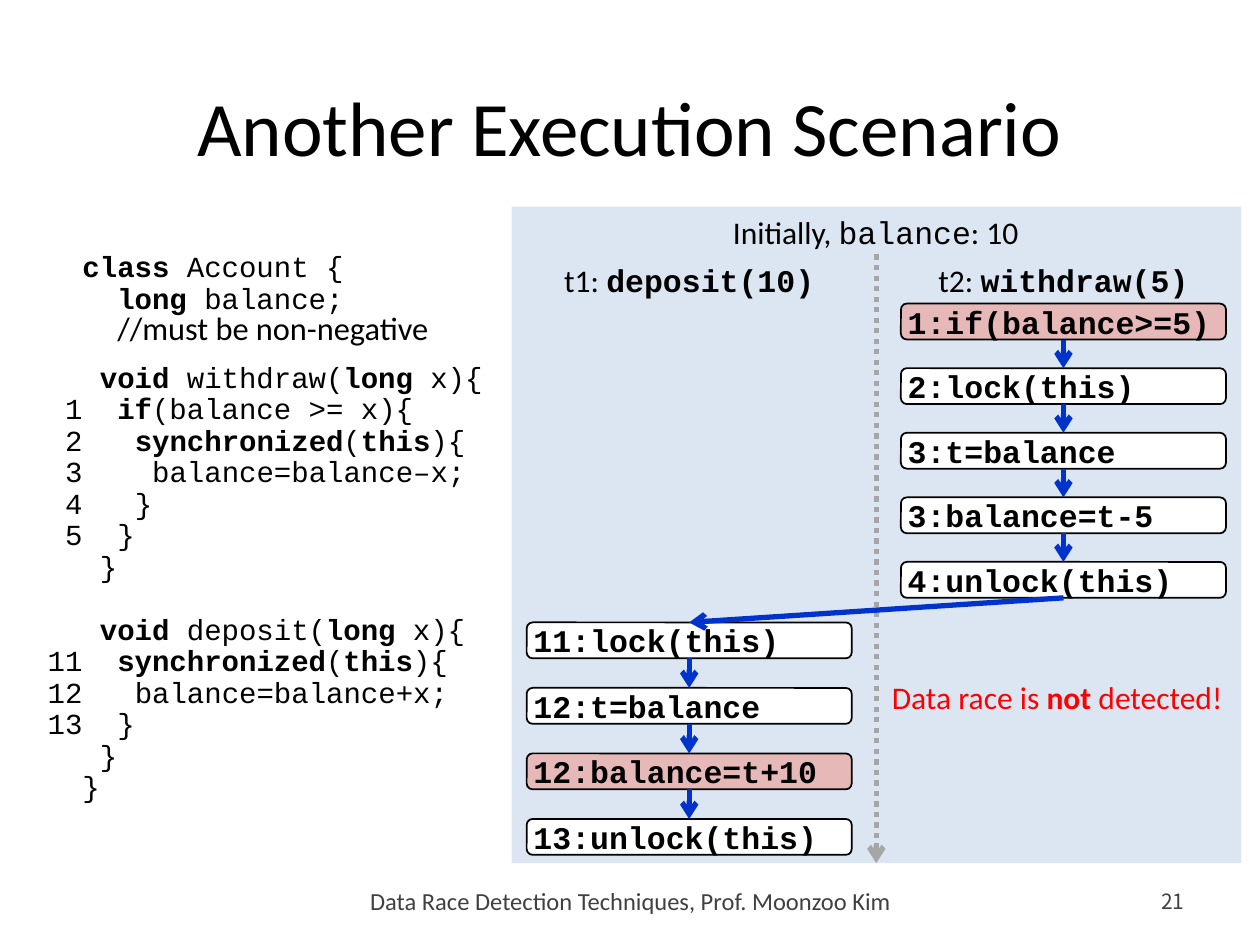
from collections import namedtuple

from lxml import etree
from pptx import Presentation
from pptx import util as u
from pptx.dml.color import RGBColor
from pptx.enum import dml, shapes, text
from pptx.oxml import ns

BLACK = RGBColor(0x00, 0x00, 0x00)
WHITE = RGBColor(0xFF, 0xFF, 0xFF)
RED = RGBColor(0xFF, 0x00, 0x00)
PINK = RGBColor(0xE6, 0xB9, 0xB8)
PALE_BLUE = RGBColor(0xDC, 0xE6, 0xF2)
BLUE = RGBColor(0x00, 0x33, 0xCC)
GREY = RGBColor(0xA6, 0xA6, 0xA6)
DARK_GREY = RGBColor(0x40, 0x40, 0x40)

SANS, MONO, NUMBER_FONT = "Calibri", "Courier New", "Noto Sans CJK KR"
WIDTH, HEIGHT = u.Inches(10), u.Inches(7.5)
COLUMN, ROW = WIDTH / 100, HEIGHT / 75
CODE_SIZE, CODE_PITCH = 16.6, 18
CHARACTER = CODE_SIZE * 0.6
NODE_WIDTH, NODE_HEIGHT = 25.8, 2.85
LABEL_HEIGHT = 4

Box = namedtuple("Box", "left top width height")
Line = namedtuple("Line", "number indent code gap comment", defaults=("", 0, ""))

CODE = [
    Line("", 2, "*class* Account {"),
    Line("", 4, "*long* balance;", comment="//must be non-negative"),
    Line("", 3, "*void* withdraw(*long* x){", gap=9),
    Line("1", 4, "*if*(balance >= x){"),
    Line("2", 5, "*synchronized*(*this*){"),
    Line("3", 6, "balance=balance–x;"),
    Line("4", 5, "}"),
    Line("5", 4, "}"),
    Line("", 3, "}"),
    Line("", 3, "*void* deposit(*long* x){", gap=CODE_PITCH),
    Line("11", 4, "*synchronized*(*this*){"),
    Line("12", 5, "balance=balance+x;"),
    Line("13", 4, "}"),
    Line("", 3, "}"),
    Line("", 2, "}"),
]
WITHDRAW = ["1:if(balance>=5)", "2:lock(this)", "3:t=balance", "3:balance=t-5", "4:unlock(this)"]
DEPOSIT = ["11:lock(this)", "12:t=balance", "12:balance=t+10", "13:unlock(this)"]
RACING = {"1:if(balance>=5)", "12:balance=t+10"}


def place(box):
    """Turn a box in grid units into slide lengths."""
    return [round(length * unit) for length, unit in zip(box, (COLUMN, ROW) * 2)]


def add_run(paragraph, words, size, font=SANS, bold=False, color=BLACK):
    """Add one styled run to a paragraph."""
    run = paragraph.add_run()
    run.text = words
    run.font.size = u.Pt(size)
    run.font.name = font
    run.font.bold = bold
    run.font.color.rgb = color


def add_label(slide, box, runs, size=18, color=BLACK, align=text.PP_ALIGN.CENTER,
              anchor=text.MSO_ANCHOR.TOP, wrap=True):
    """Add a one-paragraph text box from (words, font, bold) runs."""
    frame = slide.shapes.add_textbox(*place(box)).text_frame
    frame.word_wrap = wrap
    frame.vertical_anchor = anchor
    paragraph = frame.paragraphs[0]
    paragraph.alignment = align
    for words, font, bold in runs:
        add_run(paragraph, words, size, font, bold, color)


def add_panel(slide, kind, box, fill):
    """Add a flat filled shape without an outline."""
    shape = slide.shapes.add_shape(kind, *place(box))
    shape.shadow.inherit = False
    shape.fill.solid()
    shape.fill.fore_color.rgb = fill
    shape.line.fill.background()
    return shape


def add_arrow(slide, start, end, color=BLUE, dash=None):
    """Add a straight arrow between two grid points."""
    connector = slide.shapes.add_connector(
        shapes.MSO_CONNECTOR.STRAIGHT, *place((*start, *end)))
    connector.line.color.rgb = color
    connector.line.width = u.Pt(3)
    if dash:
        connector.line.dash_style = dash
    tail = etree.SubElement(connector.line._get_or_add_ln(), ns.qn("a:tailEnd"))
    tail.set("type", "arrow")
    etree.SubElement(connector._element.spPr, ns.qn("a:effectLst"))


def add_code(slide, box):
    """Write the numbered class listing inside the box."""
    frame = slide.shapes.add_textbox(*place(box)).text_frame
    frame.word_wrap = True
    frame.vertical_anchor = text.MSO_ANCHOR.MIDDLE
    for index, line in enumerate(CODE):
        paragraph = frame.add_paragraph() if index else frame.paragraphs[0]
        paragraph.line_spacing = u.Pt(CODE_PITCH)
        paragraph.space_before = u.Pt(line.gap)
        properties = paragraph._p.get_or_add_pPr()
        properties.set("marL", str(u.Pt(line.indent * CHARACTER)))
        hanging = 0
        if line.number:
            hanging = 2 - len(line.number) - line.indent
            add_run(paragraph, line.number + "\t", CODE_SIZE, MONO)
        properties.set("indent", str(u.Pt(hanging * CHARACTER)))
        for part, words in enumerate(line.code.split("*")):
            if words:
                add_run(paragraph, words, CODE_SIZE, MONO, part % 2 == 1)
        if line.comment:
            paragraph.add_line_break()
            add_run(paragraph, line.comment, 18.5)


def add_thread(slide, box, steps):
    """Stack the steps evenly in the box, joined by arrows, and return both ends."""
    pitch = (box.height - NODE_HEIGHT) / (len(steps) - 1)
    center = box.left + box.width / 2
    tops = [box.top + index * pitch for index in range(len(steps))]
    for step, top in zip(steps, tops):
        node = add_panel(slide, shapes.MSO_SHAPE.ROUNDED_RECTANGLE,
                         Box(box.left, top, box.width, NODE_HEIGHT),
                         PINK if step in RACING else WHITE)
        node.line.color.rgb = BLACK
        node.line.width = u.Pt(1)
        frame = node.text_frame
        frame.margin_left = frame.margin_right = u.Inches(0.04)
        frame.vertical_anchor = text.MSO_ANCHOR.MIDDLE
        frame.paragraphs[0].alignment = text.PP_ALIGN.LEFT
        add_run(frame.paragraphs[0], step, 18, MONO, True)
    for top, following in zip(tops, tops[1:]):
        add_arrow(slide, (center, top + NODE_HEIGHT), (center, following))
    return (center, box.top), (center, box.top + box.height)


def add_scenario(slide, box):
    """Draw the two-thread execution panel in the box."""
    add_panel(slide, shapes.MSO_SHAPE.RECTANGLE, box, PALE_BLUE)
    middle = box.left + box.width / 2
    left = box.left + 1.2
    right = box.left + 30.9
    add_label(slide, Box(left, box.top, 55.4, LABEL_HEIGHT),
              [("Initially, ", SANS, False), ("balance", MONO, False), (": 10", SANS, False)])
    for lane, name, call in ((left, "t1: ", "deposit(10)"), (right, "t2: ", "withdraw(5)")):
        add_label(slide, Box(lane, box.top + 3.8, NODE_WIDTH, LABEL_HEIGHT),
                  [(name, SANS, False), (call, MONO, True)])
    add_arrow(slide, (middle, box.top + 3.8), (middle, box.top + box.height),
              GREY, dml.MSO_LINE.ROUND_DOT)
    _, finish = add_thread(slide, Box(right, box.top + 7.7, NODE_WIDTH, 23.35), WITHDRAW)
    start, _ = add_thread(slide, Box(left, box.top + 33, NODE_WIDTH, 18.45), DEPOSIT)
    add_arrow(slide, finish, start)
    add_label(slide, Box(box.left + 29.2, box.top + 36.9, 29.1, LABEL_HEIGHT),
              [("Data race is ", SANS, False), ("not", SANS, True), (" detected!", SANS, False)],
              color=RED, align=text.PP_ALIGN.LEFT, wrap=False)


def add_footer(slide, box):
    """Write the course line and the page number in the box."""
    middle = text.MSO_ANCHOR.MIDDLE
    add_label(slide, Box(box.left, box.top, 67.9, box.height),
              [("Data Race Detection Techniques, Prof. Moonzoo Kim", SANS, False)],
              14, DARK_GREY, anchor=middle)
    add_label(slide, Box(box.left + box.width - 5.6, box.top, 5.6, box.height),
              [("21", NUMBER_FONT, False)], 12, DARK_GREY, text.PP_ALIGN.RIGHT, middle)


def main():
    """Build and save the presentation."""
    presentation = Presentation()
    presentation.slide_width, presentation.slide_height = WIDTH, HEIGHT
    slide = presentation.slides.add_slide(presentation.slide_layouts[6])
    add_label(slide, Box(5, 4.5, 90, 10.9), [("Another Execution Scenario", SANS, False)],
              44, anchor=text.MSO_ANCHOR.MIDDLE)
    add_code(slide, Box(2.8, 18, 39.4, 47.8))
    add_scenario(slide, Box(40.6, 16.4, 57.9, 52.1))
    add_footer(slide, Box(16.1, 69.5, 78.9, 4))
    presentation.save("out.pptx")


if __name__ == "__main__":
    main()
